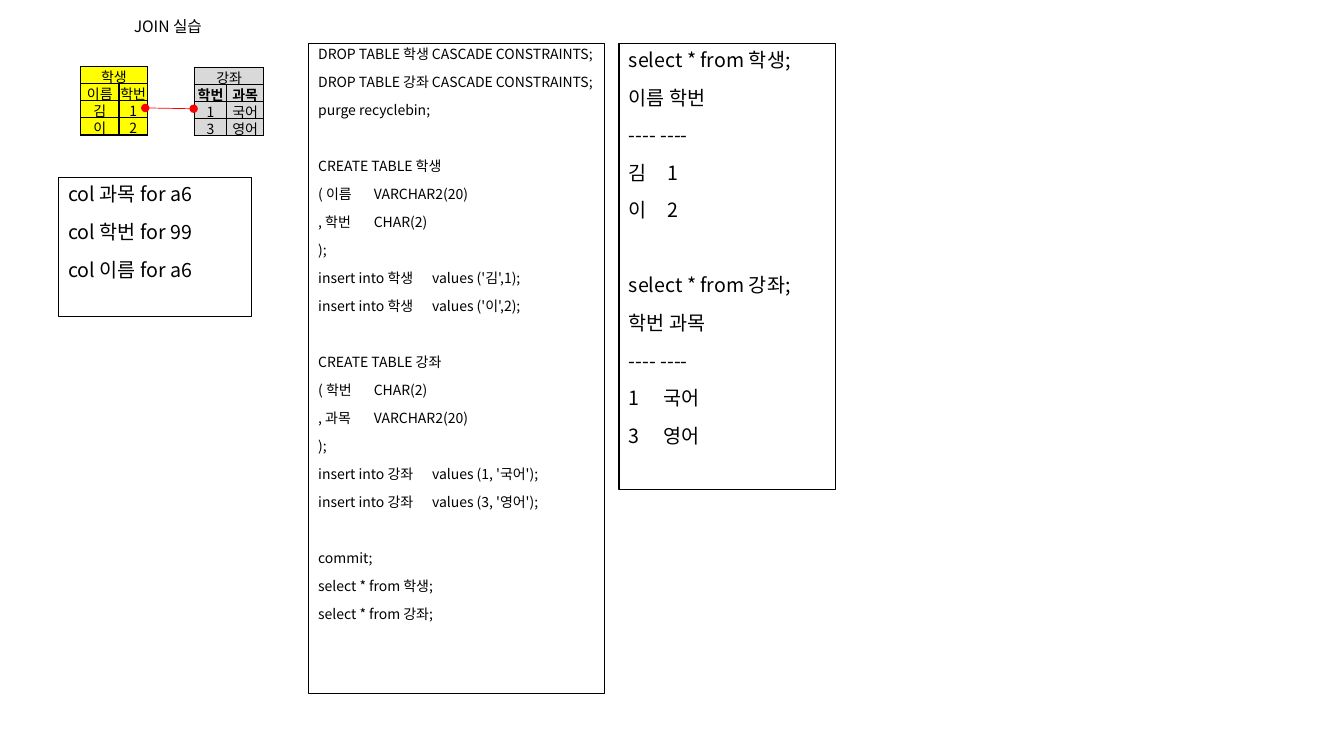
from lxml import etree
from pptx import Presentation
from pptx import util as u
from pptx.dml.color import RGBColor
from pptx.enum import shapes, text
from pptx.oxml import ns

Cm, Pt = u.Cm, u.Pt
FONT = "Noto Sans CJK KR"
BLACK = RGBColor(0x00, 0x00, 0x00)
RED = RGBColor(0xFF, 0x00, 0x00)
YELLOW = RGBColor(0xFF, 0xFF, 0x00)
GREY = RGBColor(0xD9, 0xD9, 0xD9)

# Content: each script is a list of blocks, each block (tab stops in cm, lines)
TITLE = "JOIN 실습"
CODE_TABS = (1.4, 2.87)
SETUP = [
    (CODE_TABS, ["DROP TABLE 학생 CASCADE CONSTRAINTS;",
                 "DROP TABLE 강좌 CASCADE CONSTRAINTS;",
                 "purge recyclebin;"]),
    (CODE_TABS, ["CREATE TABLE 학생",
                 "( 이름\tVARCHAR2(20)",
                 ", 학번\tCHAR(2)",
                 ");",
                 "insert into 학생\tvalues ('김',1);",
                 "insert into 학생\tvalues ('이',2);"]),
    (CODE_TABS, ["CREATE TABLE 강좌",
                 "( 학번\tCHAR(2)",
                 ", 과목\tVARCHAR2(20)",
                 ");",
                 "insert into 강좌\tvalues (1, '국어');",
                 "insert into 강좌\tvalues (3, '영어');"]),
    ((), ["commit;", "select * from 학생;", "select * from 강좌;"]),
]
FORMATS = [((), ["col 과목 for a6", "col 학번 for 99", "col 이름 for a6"])]
RESULTS = [
    ((0.98,), ["select * from 학생;", "이름 학번", "---- ----", "김\t1", "이\t2"]),
    ((0.86,), ["select * from 강좌;", "학번 과목", "---- ----", "1\t국어", "3\t영어"]),
]

# Box: blocks, (left, top, width, height) in cm, text size, exact line pitch, block gap
BOXES = [
    (SETUP, (7.77, 1.09, 7.47, 16.38), 10, Pt(10), 20),
    (FORMATS, (1.47, 4.47, 4.88, 3.51), 14, None, 0),
    (RESULTS, (15.6, 1.09, 5.46, 11.25), 14, None, 26.8),
]
SPACE_BEFORE = 10

# Table: name, rows, (left, top), column widths in cm, fill, bold cells, underlined cells
ROW_HEIGHT = 0.43
TABLES = [
    ("강좌", [("학번", "과목"), ("1", "국어"), ("3", "영어")],
     (4.9, 1.7), (0.81, 0.94), GREY, {"학번", "과목"}, set()),
    ("학생", [("이름", "학번"), ("김", "1"), ("이", "2")],
     (2.03, 1.68), (0.97, 0.71), YELLOW, set(), {"학번"}),
]
KEY_LINK = (3.66, 2.72, 4.88, 2.74)


def add_xml(parent, tag, **attributes):
    return etree.SubElement(parent, ns.qn(tag), attributes)


def add_run(paragraph, words, size, bold=False, underline=False):
    run = paragraph.add_run()
    run.text = words
    font = run.font
    font.size, font.bold, font.underline = Pt(size), bold, underline
    font.color.rgb = BLACK
    font.name = FONT
    add_xml(run._r.get_or_add_rPr(), "a:ea", typeface=FONT)


def add_script_box(slide, blocks, place, size, pitch, gap):
    box = slide.shapes.add_shape(shapes.MSO_SHAPE.RECTANGLE, *map(Cm, place))
    box.shadow.inherit = False
    box.fill.background()
    box.line.color.rgb = BLACK
    box.line.width = Pt(0.75)
    frame = box.text_frame
    frame.word_wrap = True
    frame.vertical_anchor = text.MSO_ANCHOR.TOP
    paragraph = frame.paragraphs[0]
    for b, (tabs, lines) in enumerate(blocks):
        for n, line in enumerate(lines):
            if b or n:
                paragraph = frame.add_paragraph()
            paragraph.alignment = text.PP_ALIGN.LEFT
            paragraph.space_before = Pt(SPACE_BEFORE + (gap if b and n == 0 else 0))
            if pitch:
                paragraph.line_spacing = pitch
            if "\t" in line:
                stops = add_xml(paragraph._p.get_or_add_pPr(), "a:tabLst")
                for tab in tabs:
                    add_xml(stops, "a:tab", pos=str(int(Cm(tab))), algn="l")
            add_run(paragraph, line, size)


def style_cell(cell, fill):
    cell.margin_left = cell.margin_right = cell.margin_top = cell.margin_bottom = 0
    properties = cell._tc.get_or_add_tcPr()
    for side in "LRTB":
        border = add_xml(properties, f"a:ln{side}", w=str(int(Pt(1))))
        add_xml(add_xml(border, "a:solidFill"), "a:srgbClr", val=str(BLACK))
    cell.fill.solid()
    cell.fill.fore_color.rgb = fill


def add_entity(slide, name, rows, place, widths, fill, bold, underlined):
    grid = [(name, "")] + rows
    table = slide.shapes.add_table(
        len(grid), len(widths), *map(Cm, place),
        Cm(sum(widths)), Cm(ROW_HEIGHT * len(grid))).table
    table.first_row = table.horz_banding = False
    for column, width in zip(table.columns, widths):
        column.width = Cm(width)
    table.cell(0, 0).merge(table.cell(0, len(widths) - 1))
    for r, values in enumerate(grid):
        table.rows[r].height = Cm(ROW_HEIGHT)
        for c, value in enumerate(values):
            cell = table.cell(r, c)
            style_cell(cell, fill)
            if value:
                paragraph = cell.text_frame.paragraphs[0]
                paragraph.alignment = text.PP_ALIGN.CENTER
                add_run(paragraph, value, 10, value in bold, value in underlined)


def main():
    deck = Presentation()
    deck.slide_width, deck.slide_height = Cm(33.87), Cm(19.05)
    slide = deck.slides.add_slide(deck.slide_layouts[6])

    # SQL scripts and their output
    for box in BOXES:
        add_script_box(slide, *box)

    # Title
    title = slide.shapes.add_textbox(Cm(3), Cm(0.38), Cm(2.46), Cm(0.69)).text_frame
    title.word_wrap = True
    title.vertical_anchor = text.MSO_ANCHOR.MIDDLE
    heading = title.paragraphs[0]
    heading.alignment = text.PP_ALIGN.CENTER
    heading.line_spacing = 0.7
    add_run(heading, TITLE, 11.2)

    # Entity tables
    for entity in TABLES:
        add_entity(slide, *entity)

    # Link between the two key columns
    link = slide.shapes.add_connector(shapes.MSO_CONNECTOR.STRAIGHT, *map(Cm, KEY_LINK))
    link.line.color.rgb = RED
    link.line.width = Pt(0.5)
    stroke = link.line._get_or_add_ln()
    for end in ("a:headEnd", "a:tailEnd"):
        add_xml(stroke, end, type="oval")
    add_xml(link._element.spPr, "a:effectLst")

    deck.save("out.pptx")


if __name__ == "__main__":
    main()
